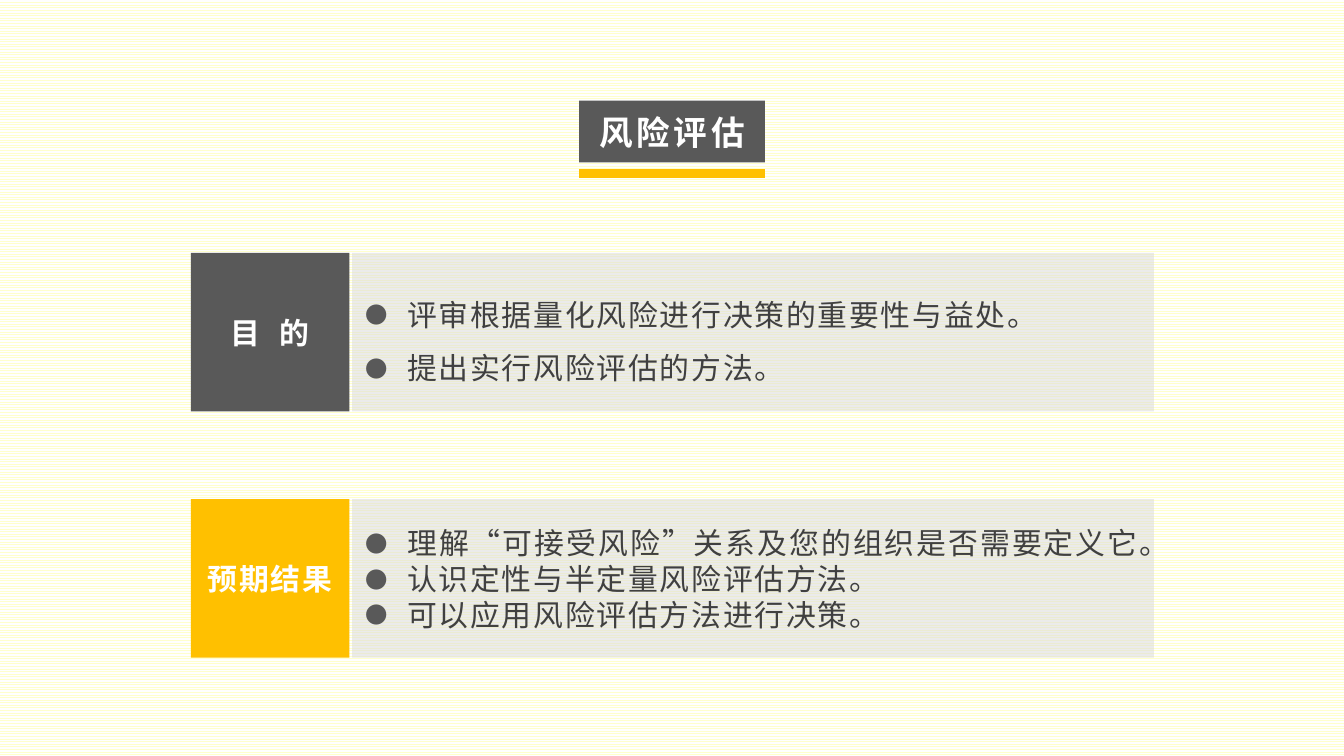
from dataclasses import dataclass

from lxml.etree import SubElement
from pptx import Presentation
from pptx.dml.color import RGBColor
from pptx.enum.dml import MSO_PATTERN
from pptx.enum.shapes import MSO_CONNECTOR, MSO_SHAPE
from pptx.enum.text import MSO_ANCHOR, PP_ALIGN
from pptx.oxml.ns import qn
from pptx.util import Pt


@dataclass(frozen=True)
class Theme:
    font: str = "Noto Sans CJK SC"
    paper: str = "FFFFFF"
    stripe: str = "FFFFCC"
    dark: str = "595959"
    accent: str = "FFC000"
    panel: str = "D9D9D9"
    light_text: str = "FFFFFF"
    body_text: str = "404040"
    title_size: float = 18
    text_size: float = 16


THEME = Theme()


def color(value):
    return RGBColor.from_string(value)


def paint_background(slide):
    fill = slide.background.fill
    fill.patterned()
    fill.pattern = MSO_PATTERN.LIGHT_HORIZONTAL
    fill.fore_color.rgb = color(THEME.stripe)
    fill.back_color.rgb = color(THEME.paper)


def add_box(slide, left, top, width, height, fill, opacity=100):
    shape = slide.shapes.add_shape(
        MSO_SHAPE.RECTANGLE, Pt(left), Pt(top), Pt(width), Pt(height))
    shape.shadow.inherit = False
    shape.line.fill.background()
    shape.fill.solid()
    shape.fill.fore_color.rgb = color(fill)
    if opacity < 100:
        solid = shape.fill._xPr.find(qn("a:solidFill"))
        SubElement(solid[0], qn("a:alpha"), val=str(opacity * 1000))
    frame = shape.text_frame
    frame.word_wrap = True
    frame.vertical_anchor = MSO_ANCHOR.MIDDLE
    return shape


def add_text(paragraph, text, size, text_color, spacing, bold=False):
    run = paragraph.add_run()
    run.text = text
    run.font.size = Pt(size)
    run.font.bold = bold
    run.font.color.rgb = color(text_color)
    run.font.name = THEME.font
    properties = run._r.get_or_add_rPr()
    properties.set("spc", str(round(spacing * 100)))
    SubElement(properties, qn("a:ea"), typeface=THEME.font)


def add_label(shape, text, size, spacing):
    paragraph = shape.text_frame.paragraphs[0]
    paragraph.alignment = PP_ALIGN.CENTER
    add_text(paragraph, text, size, THEME.light_text, spacing, bold=True)


def add_bullet(paragraph):
    properties = paragraph._p.get_or_add_pPr()
    properties.set("marL", str(Pt(22.5)))
    properties.set("indent", str(-Pt(22.5)))
    bullet_color = SubElement(properties, qn("a:buClr"))
    SubElement(bullet_color, qn("a:srgbClr"), val=THEME.dark)
    SubElement(properties, qn("a:buSzPct"), val="75000")
    SubElement(properties, qn("a:buFont"), typeface=THEME.font)
    SubElement(properties, qn("a:buChar"), char="●")


def add_title(slide, left, top, width, height, text):
    shape = add_box(slide, left, top, width, height, THEME.dark)
    add_label(shape, text, THEME.title_size, 2)
    rule_y = top + height + 5.8
    rule = slide.shapes.add_connector(
        MSO_CONNECTOR.STRAIGHT, Pt(left), Pt(rule_y), Pt(left + width), Pt(rule_y))
    rule.line.color.rgb = color(THEME.accent)
    rule.line.width = Pt(5)
    SubElement(rule._element.spPr, qn("a:effectLst"))


def add_section(slide, left, top, width, height, fill, label, label_spacing,
                items, line_spacing):
    gap = 1.4
    label_box = add_box(slide, left, top, height, height, fill)
    add_label(label_box, label, THEME.text_size, label_spacing)

    panel = add_box(slide, left + height + gap, top, width - height - gap, height,
                    THEME.panel, opacity=50)
    frame = panel.text_frame
    for index, item in enumerate(items):
        paragraph = frame.add_paragraph() if index else frame.paragraphs[0]
        paragraph.alignment = PP_ALIGN.JUSTIFY
        paragraph.line_spacing = line_spacing
        add_bullet(paragraph)
        add_text(paragraph, item, THEME.text_size, THEME.body_text, 1)


def main():
    presentation = Presentation()
    presentation.slide_width = Pt(720)
    presentation.slide_height = Pt(405)
    slide = presentation.slides.add_slide(presentation.slide_layouts[6])
    paint_background(slide)
    add_title(slide, 310.3, 54, 99.4, 33.1, "风险评估")

    sections = [
        (THEME.dark, "目 的", 3.3, [
            "评审根据量化风险进行决策的重要性与益处。",
            "提出实行风险评估的方法。",
        ], 1.5),
        (THEME.accent, "预期结果", 1, [
            "理解“可接受风险”关系及您的组织是否需要定义它。",
            "认识定性与半定量风险评估方法。",
            "可以应用风险评估方法进行决策。",
        ], 1.0),
    ]
    for index, section in enumerate(sections):
        add_section(slide, 102.2, 135.4 + index * 132, 516, 85, *section)

    presentation.save("out.pptx")


if __name__ == "__main__":
    main()
